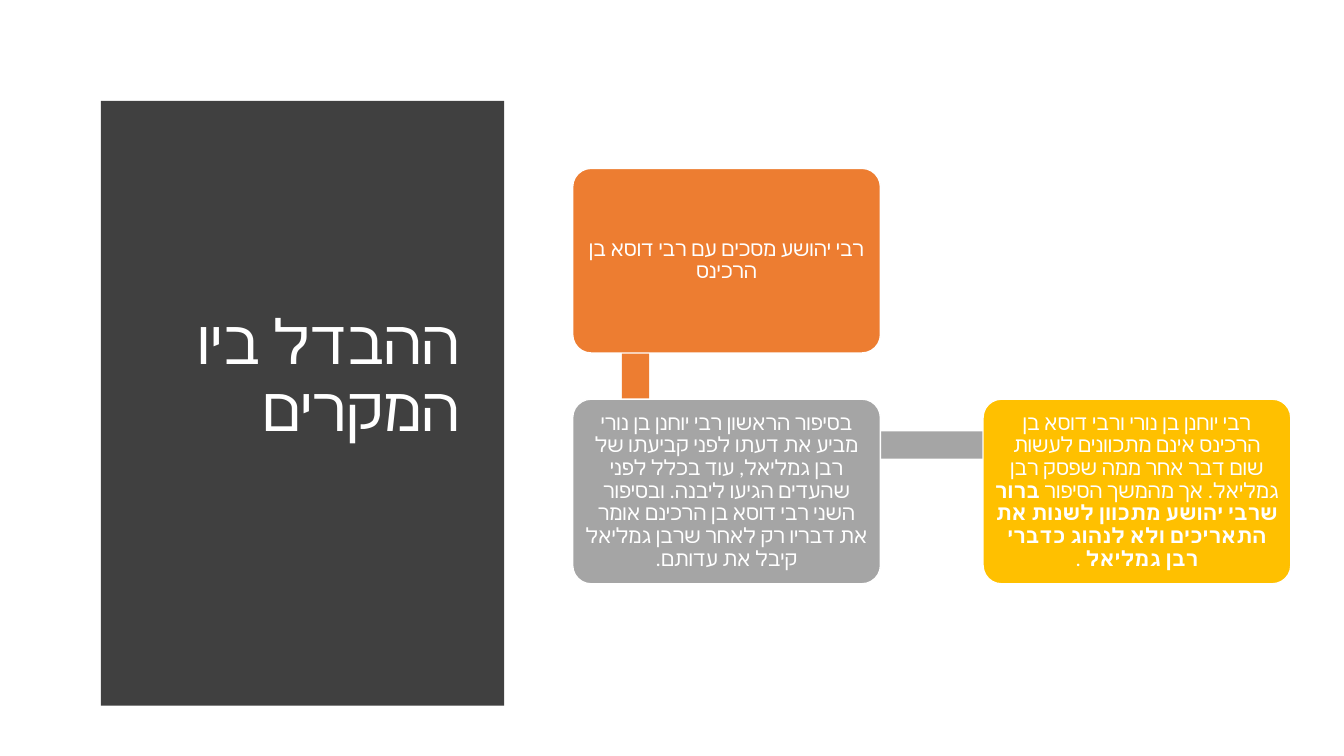
from lxml.etree import SubElement
from pptx import Presentation
from pptx.dml.color import RGBColor as Color
from pptx.enum.shapes import MSO_SHAPE as Shape
from pptx.enum.text import MSO_ANCHOR as Anchor, PP_ALIGN as Align
from pptx.oxml.ns import qn
from pptx.util import Inches, Pt

HUES = {"panel": "404040", "white": "FFFFFF", "orange": "ED7D31",
        "grey": "A5A5A5", "gold": "FFC000"}
WIDE, HIGH = 13.33, 7.5
LEFT, TOP = 5.68, 1.67
COL, ROW = 4.07, 2.29
THICK = 0.27


class Deck:
    """Holds the style and the current slide; cards sit on a column and row grid."""

    def __init__(self):
        self.deck = Presentation()
        self.deck.slide_width, self.deck.slide_height = Inches(WIDE), Inches(HIGH)
        self.slide = self.deck.slides.add_slide(self.deck.slide_layouts[6])
        self.shapes = self.slide.shapes
        self.font = "Calibri"

    def paint(self, shape, hue, edge=None):
        shape.shadow.inherit = False
        shape.fill.solid()
        shape.fill.fore_color.rgb = Color.from_string(HUES[hue])
        if edge:
            shape.line.color.rgb = Color.from_string(HUES[edge])
            shape.line.width = Pt(1)
        else:
            shape.line.fill.background()

    def label(self, shape, runs, size, align, inset):
        frame = shape.text_frame
        frame.word_wrap = True
        frame.vertical_anchor = Anchor.MIDDLE
        frame.margin_left = frame.margin_right = Inches(inset)
        frame.margin_top = frame.margin_bottom = Inches(0.06)
        para = frame.paragraphs[0]
        para.alignment = align
        para.line_spacing = 0.9
        para._p.get_or_add_pPr().set("rtl", "1")
        for text, bold in runs:
            run = para.add_run()
            run.text = text
            run.font.size, run.font.bold = Pt(size), bold
            run.font.color.rgb = Color.from_string(HUES["white"])
            run.font.name = self.font
            SubElement(run._r.get_or_add_rPr(), qn("a:cs"), typeface=self.font)

    def panel(self, left, top, right, low, bulge, steps=40):
        mid, half = (top + low) / 2, (low - top) / 2
        curve = []
        for step in range(steps + 1):
            part = 2 * step / steps - 1
            curve.append((right - bulge * part ** 2, mid + half * part))
        form = self.shapes.build_freeform(left, top, scale=Inches(1))
        form.add_line_segments(curve + [(left, low)], close=True)
        self.paint(form.convert_to_shape(), "panel")

    def title(self, text, left, top, wide, high):
        box = self.shapes.add_textbox(
            Inches(left * WIDE), Inches(top * HIGH), Inches(wide * WIDE), Inches(high * HIGH))
        self.label(box, [(text, False)], 44, Align.RIGHT, 0.1)

    def block(self, kind, col, row, wide, high):
        return self.shapes.add_shape(
            kind, Inches(LEFT + col * COL), Inches(TOP + row * ROW), Inches(wide), Inches(high))

    def bar(self, col, row, wide, high, hue):
        self.paint(self.block(Shape.RECTANGLE, col, row, wide, high), hue)

    def card(self, col, row, hue, runs):
        card = self.block(Shape.ROUNDED_RECTANGLE, col, row, 0.75 * COL, 0.8 * ROW)
        card.adjustments[0] = 0.1
        self.paint(card, hue, "white")
        self.label(card, runs, 15, Align.CENTER, 0.06)


def main():
    deck = Deck()
    deck.panel(0.53, 0.52, 5.32, 6.96, 0.24)
    deck.title("ההבדל ביו המקרים", 0.07, 0.15, 0.28, 0.7)
    deck.bar(0.12, 0.2, THICK, ROW, "orange")
    deck.card(0, 0, "orange", [("רבי יהושע מסכים עם רבי דוסא בן הרכינס", False)])
    deck.bar(0.15, 1.14, COL, THICK, "grey")
    deck.card(0, 1, "grey", [(
        "בסיפור הראשון רבי יוחנן בן נורי מביע את דעתו לפני קביעתו של רבן גמליאל, "
        "עוד בכלל לפני שהעדים הגיעו ליבנה. ובסיפור השני רבי דוסא בן הרכינם אומר "
        "את דבריו רק לאחר שרבן גמליאל קיבל את עדותם.", False)])
    deck.card(1, 1, "gold", [
        ("רבי יוחנן בן נורי ורבי דוסא בן הרכינס אינם מתכוונים לעשות שום דבר אחר "
         "ממה שפסק רבן גמליאל. אך מהמשך הסיפור ", False),
        ("ברור שרבי יהושע מתכוון לשנות את התאריכים ולא לנהוג כדברי רבן גמליאל", True),
        (" .", False)])
    deck.deck.save("out.pptx")


if __name__ == "__main__":
    main()
